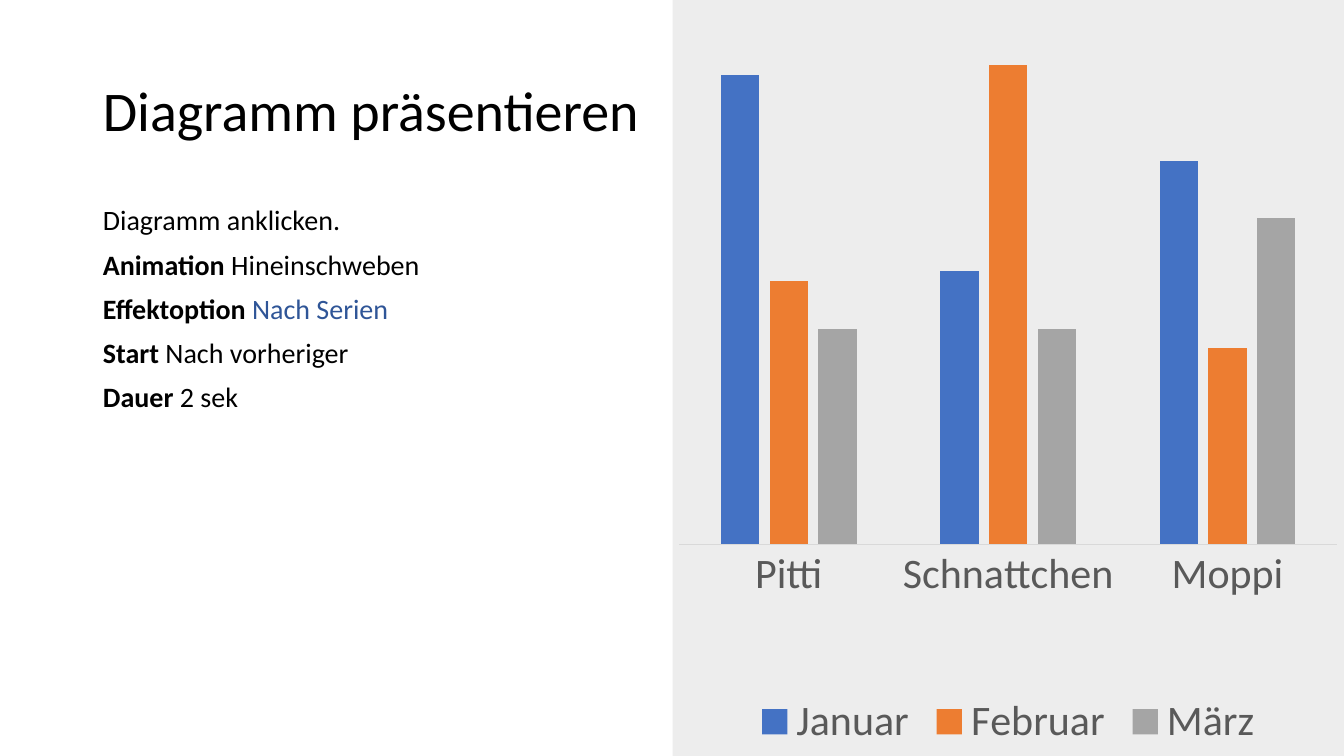
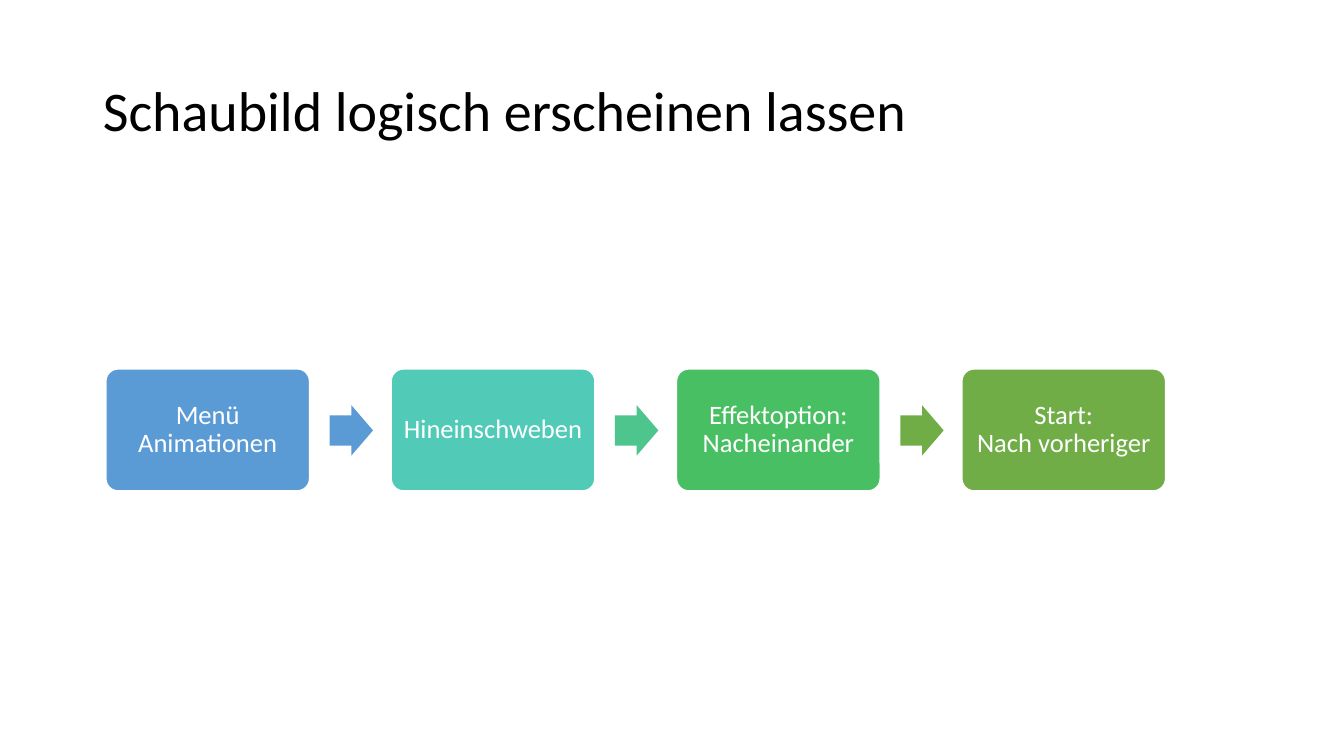
"""Builds two slides on animating a chart and a process diagram."""
from lxml.etree import SubElement
from pptx import Presentation
from pptx.chart.data import CategoryChartData
from pptx.dml.color import RGBColor
from pptx.enum.chart import XL_CHART_TYPE, XL_LEGEND_POSITION, XL_TICK_MARK
from pptx.enum.shapes import MSO_SHAPE
from pptx.enum.text import MSO_ANCHOR, MSO_AUTO_SIZE, PP_ALIGN
from pptx.oxml import parse_xml
from pptx.oxml.ns import nsdecls, qn
from pptx.util import Pt

PX = 9144
FONT = "Calibri"
HEX = {
    "black": "000000", "white": "FFFFFF", "panel": "EDEDED",
    "label": "595959", "axis": "D9D9D9", "accent": "2F5597",
    "january": "4472C4", "february": "ED7D31", "march": "A5A5A5",
    "blue": "5B9BD5", "teal": "52CAB8", "mint": "4DC58D",
    "green": "49BF64", "olive": "70AD47",
}
COLOR = {name: RGBColor.from_string(value) for name, value in HEX.items()}


def write(para, text, size=20, color="black", bold=False, align=PP_ALIGN.LEFT, before=0):
    para.alignment = align
    para.line_spacing = 0.9
    para.space_before = Pt(before)
    for number, line in enumerate(text.split("\n")):
        if number:
            para.add_line_break()
        span = para.add_run()
        span.text = line
        span.font.name = FONT
        span.font.size = Pt(size)
        span.font.bold = bold
        span.font.color.rgb = COLOR[color]


def add_page(layout, title_text):
    page = deck.slides.add_slide(deck.slide_layouts.get_by_name(layout))
    title = page.shapes.title
    title.left, title.top, title.width, title.height = 92 * PX, 40 * PX, 1150 * PX, 145 * PX
    title.text_frame.auto_size = MSO_AUTO_SIZE.NONE
    title.text_frame.vertical_anchor = MSO_ANCHOR.MIDDLE
    write(title.text_frame.paragraphs[0], title_text, size=40)
    return page


deck = Presentation()
deck.slide_width, deck.slide_height = 1333 * PX, 750 * PX

page = add_page("Title and Content", "Diagramm präsentieren")
body = page.placeholders[1]
body.left, body.top, body.width, body.height = 92 * PX, 200 * PX, 575 * PX, 476 * PX
frame = body.text_frame
frame.auto_size = MSO_AUTO_SIZE.NONE
steps = [
    ("", "Diagramm anklicken.", "black"),
    ("Animation ", "Hineinschweben", "black"),
    ("Effektoption ", "Nach Serien", "accent"),
    ("Start ", "Nach vorheriger", "black"),
    ("Dauer ", "2 sek", "black"),
]
for number, (term, value, color) in enumerate(steps):
    para = frame.add_paragraph() if number else frame.paragraphs[0]
    if term:
        write(para, term, bold=True, before=10)
    write(para, value, color=color, before=10)
    properties = para._p.get_or_add_pPr()
    properties.set("marL", "0")
    properties.set("indent", "0")
    SubElement(properties, qn("a:buNone"))

data = CategoryChartData()
data.categories = ["Pitti", "Schnattchen", "Moppi"]
data.add_series("Januar", (98, 57, 80))
data.add_series("Februar", (55, 100, 41))
data.add_series("März", (45, 45, 68))
chart = page.shapes.add_chart(
    XL_CHART_TYPE.COLUMN_CLUSTERED, 667 * PX, 0, 666 * PX, 750 * PX, data
).chart
chart.has_title = False
chart.font.name = FONT
chart.font.size = Pt(10)
chart.has_legend = True
chart.legend.position = XL_LEGEND_POSITION.BOTTOM
chart.legend.include_in_layout = False
category_axis = chart.category_axis
category_axis.major_tick_mark = XL_TICK_MARK.NONE
category_axis.format.line.color.rgb = COLOR["axis"]
category_axis.format.line.width = Pt(0.75)
for font in (chart.legend.font, category_axis.tick_labels.font):
    font.name = FONT
    font.size = Pt(30)
    font.color.rgb = COLOR["label"]
value_axis = chart.value_axis
value_axis.visible = False
value_axis.has_major_gridlines = False
value_axis.minimum_scale = 0
value_axis.maximum_scale = 113.6
plot = chart.plots[0]
plot.gap_width = 219
plot.overlap = -27
plot.vary_by_categories = False
for series, color in zip(plot.series, ("january", "february", "march")):
    series.format.fill.solid()
    series.format.fill.fore_color.rgb = COLOR[color]

chart_space = chart._chartSpace
chart_space.find(qn("c:chart")).addnext(parse_xml(
    f'<c:spPr {nsdecls("c", "a")}><a:solidFill><a:srgbClr val="{HEX["panel"]}"/>'
    '</a:solidFill><a:ln><a:noFill/></a:ln></c:spPr>'
))
plot_area = chart_space.find(qn("c:chart")).find(qn("c:plotArea"))
for layout in plot_area.findall(qn("c:layout")):
    plot_area.remove(layout)
plot_area.insert(0, parse_xml(
    f'<c:layout {nsdecls("c")}><c:manualLayout><c:layoutTarget val="inner"/>'
    '<c:xMode val="edge"/><c:yMode val="edge"/><c:x val="0.01"/><c:y val="0"/>'
    '<c:w val="0.98"/><c:h val="0.72"/></c:manualLayout></c:layout>'
))

page = add_page("Title Only", "Schaubild logisch erscheinen lassen")
stages = [
    ("Menü Animationen", "blue", "blue"),
    ("Hineinschweben", "teal", "mint"),
    ("Effektoption: Nacheinander", "green", "olive"),
    ("Start:\nNach vorheriger", "olive", None),
]
for number, (label, color, arrow_color) in enumerate(stages):
    left = 105 + 283 * number
    box = page.shapes.add_shape(
        MSO_SHAPE.ROUNDED_RECTANGLE, left * PX, 366 * PX, 202 * PX, 121 * PX
    )
    box.shadow.inherit = False
    box.adjustments[0] = 0.1
    box.fill.solid()
    box.fill.fore_color.rgb = COLOR[color]
    box.line.color.rgb = COLOR["white"]
    box.line.width = Pt(1)
    frame = box.text_frame
    frame.word_wrap = True
    frame.vertical_anchor = MSO_ANCHOR.MIDDLE
    frame.margin_left = frame.margin_right = 7 * PX
    frame.margin_top = frame.margin_bottom = 8 * PX
    write(frame.paragraphs[0], label, size=19, color="white", align=PP_ALIGN.CENTER)
    if arrow_color:
        arrow = page.shapes.add_shape(
            MSO_SHAPE.RIGHT_ARROW, (left + 222) * PX, 402 * PX, 43 * PX, 50 * PX
        )
        arrow.shadow.inherit = False
        arrow.adjustments[0] = 0.6
        arrow.adjustments[1] = 0.5
        arrow.fill.solid()
        arrow.fill.fore_color.rgb = COLOR[arrow_color]
        arrow.line.fill.background()

deck.save("out.pptx")
